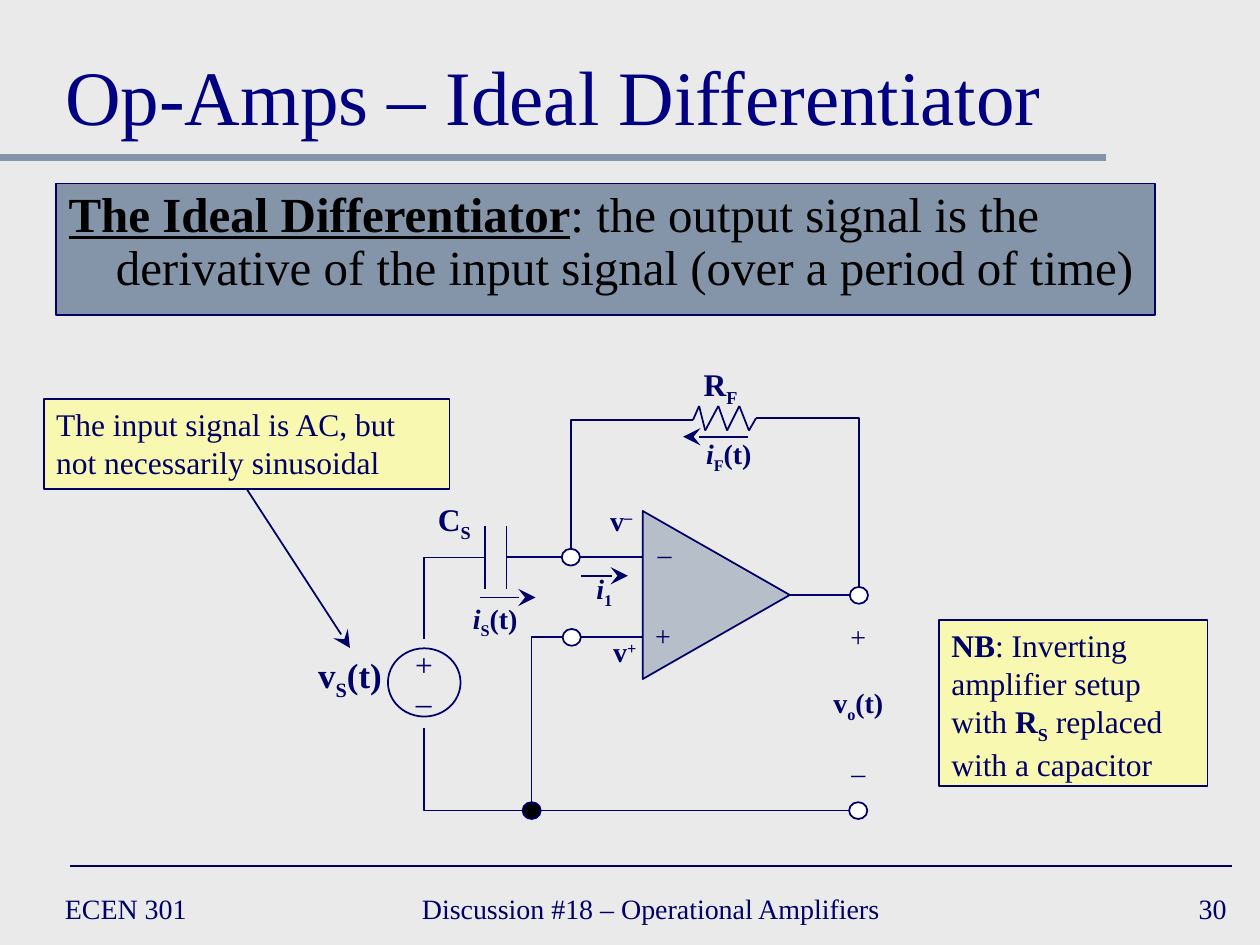
from itertools import pairwise
from lxml import etree
from pptx import Presentation
from pptx.dml.color import RGBColor
from pptx.enum import shapes as es, text as et
from pptx.oxml.ns import qn
from pptx.util import Pt

NAVY = RGBColor(0x00, 0x00, 0x66)
TITLE_BLUE = RGBColor(0x00, 0x00, 0x80)
SLATE = RGBColor(0x84, 0x95, 0xA9)
YELLOW = RGBColor(0xFF, 0xFF, 0x99)
WHITE = RGBColor(0xFF, 0xFF, 0xFF)
BLACK = RGBColor(0x00, 0x00, 0x00)
PAPER = RGBColor(0xEA, 0xEA, 0xEA)
FONT = "Times New Roman"
BASELINES = {"sub": "-25000", "sup": "30000"}

deck = Presentation()
deck.slide_width, deck.slide_height = Pt(720), Pt(540)
slide = deck.slides.add_slide(deck.slide_layouts[1])
slide.background.fill.solid()
slide.background.fill.fore_color.rgb = PAPER
shapes = slide.shapes


def write(paragraph, runs, size, color=NAVY):
    for words, style in runs:
        run = paragraph.add_run()
        run.text = words
        font = run.font
        font.name, font.size, font.color.rgb = FONT, Pt(size), color
        font.bold = "bold" in style
        font.italic = "italic" in style
        font.underline = "underline" in style
        for key, offset in BASELINES.items():
            if key in style:
                run._r.get_or_add_rPr().set("baseline", offset)


def draw_line(x1, y1, x2, y2, color=NAVY, width=1, arrow=False, bent=False):
    kind = es.MSO_CONNECTOR.ELBOW if bent else es.MSO_CONNECTOR.STRAIGHT
    line = shapes.add_connector(kind, Pt(x1), Pt(y1), Pt(x2), Pt(y2))
    line.line.color.rgb, line.line.width = color, Pt(width)
    properties = line._element.spPr
    if bent:
        properties.find(qn("a:prstGeom")).set("prst", "bentConnector2")
    if arrow:
        etree.SubElement(line.line._get_or_add_ln(), qn("a:tailEnd"), type="stealth", w="lg", len="lg")
    etree.SubElement(properties, qn("a:effectLst"))
    return line


draw_line(0, 90, 632, 90, SLATE, 4)
draw_line(40, 495, 704, 495)

title = shapes.title
title.left, title.top, title.width, title.height = Pt(30), Pt(12), Pt(660), Pt(72)
title.text_frame.auto_size = et.MSO_AUTO_SIZE.NONE
title.text_frame.vertical_anchor = et.MSO_ANCHOR.BOTTOM
heading = title.text_frame.paragraphs[0]
heading.alignment = et.PP_ALIGN.LEFT
write(heading, [("Op-Amps – Ideal Differentiator", "")], 44, TITLE_BLUE)

definition = slide.placeholders[1]
definition.left, definition.top, definition.width, definition.height = Pt(32), Pt(105), Pt(628), Pt(75)
definition.fill.solid()
definition.fill.fore_color.rgb = SLATE
definition.line.color.rgb, definition.line.width = NAVY, Pt(0.75)
definition.text_frame.auto_size = et.MSO_AUTO_SIZE.NONE
statement = definition.text_frame.paragraphs[0]
statement.line_spacing, statement.space_before = 0.9, Pt(0)
indents = statement._p.get_or_add_pPr()
indents.set("marL", str(Pt(27)))
indents.set("indent", str(Pt(-27)))
etree.SubElement(indents, qn("a:buNone"))
write(statement, [("The Ideal Differentiator", "bold underline"),
                  (": the output signal is the derivative of the input signal (over a period of time)", "")],
      28, BLACK)

amplifier = shapes.add_shape(es.MSO_SHAPE.ISOSCELES_TRIANGLE, Pt(361.3), Pt(298), Pt(96), Pt(84))
amplifier.rotation = 90
source = shapes.add_shape(es.MSO_SHAPE.OVAL, Pt(221.7), Pt(370.5), Pt(41.5), Pt(39))
notes = []
for x, y, w, h, runs in [
    (25, 228, 232, 51.5, [("The input signal is AC, but not necessarily sinusoidal", "")]),
    (536.5, 354.3, 153.5, 95, [("NB", "bold"), (": Inverting amplifier setup with ", ""), ("R", "bold"),
                               ("S", "bold sub"), (" replaced with a capacitor", "")]),
]:
    note = shapes.add_shape(es.MSO_SHAPE.RECTANGLE, Pt(x), Pt(y), Pt(w), Pt(h))
    note.text_frame.word_wrap = True
    note.text_frame.vertical_anchor = et.MSO_ANCHOR.TOP
    note.text_frame.paragraphs[0].alignment = et.PP_ALIGN.LEFT
    write(note.text_frame.paragraphs[0], runs, 18)
    notes.append(note)

for part, color, opacity in [(amplifier, SLATE, 50), (notes[0], YELLOW, 70), (notes[1], YELLOW, 70)]:
    part.fill.solid()
    part.fill.fore_color.rgb = color
    tint = part.fill._xPr.find(qn("a:solidFill"))[0]
    etree.SubElement(tint, qn("a:alpha"), val=str(opacity * 1000))
source.fill.background()
for part in [amplifier, source, *notes]:
    part.shadow.inherit = False
    part.line.color.rgb, part.line.width = NAVY, Pt(1)

for wire in [
    (367, 364.2, 331.5, 364.2), (367, 318.4, 331.5, 318.4), (486, 340.2, 451, 340.2),
    (485.5, 463.2, 309, 463.2), (321, 318.4, 289.4, 318.4),
    (277.2, 300.5, 277.2, 336.5), (289.4, 300.5, 289.4, 336.5),
]:
    draw_line(*wire)
for bend in [
    (396, 240, 326.2, 313.2), (432, 239, 490.8, 335.5), (277.2, 318.6, 242.4, 365),
    (321.5, 364.2, 303.8, 458.6), (299, 463.2, 242.4, 415.8),
]:
    draw_line(*bend, bent=True)

resistor = [(396, 240), (399.5, 232), (403, 246), (410.5, 232), (415.5, 246),
            (422.5, 232), (428, 246), (432, 239)]
for start, end in pairwise(resistor):
    draw_line(*start, *end)

for current in [(332, 329, 358.8, 329), (427.5, 249.6, 390.4, 249.6), (274.2, 341.4, 306, 341.4)]:
    draw_line(*current, arrow=True)
pointer = draw_line(141, 279.5, 200, 370.3, arrow=True)
pointer.begin_connect(notes[0], 2)

for x, y, color in [(326.7, 364.2, WHITE), (326.2, 318.4, WHITE), (490.8, 340.2, WHITE),
                    (490.4, 463.2, WHITE), (303.8, 463.2, BLACK)]:
    node = shapes.add_shape(es.MSO_SHAPE.OVAL, Pt(x - 5.2), Pt(y - 4.8), Pt(10.4), Pt(9.6))
    node.shadow.inherit = False
    node.fill.solid()
    node.fill.fore_color.rgb = color
    node.line.color.rgb, node.line.width = NAVY, Pt(1)

LEFT, CENTER, RIGHT = et.PP_ALIGN.LEFT, et.PP_ALIGN.CENTER, et.PP_ALIGN.RIGHT
for x, y, w, h, size, align, gap, lines in [
    (30, 504, 156, 30, 16, LEFT, 0, [[("ECEN 301", "")]]),
    (234, 504, 276, 30, 16, LEFT, 0, [[("Discussion #18 – Operational Amplifiers", "")]]),
    (558, 504, 150, 30, 16, RIGHT, 0, [[("30", "")]]),
    (368.5, 303, 22.5, 26.6, 16, CENTER, 0, [[("–", "")]]),
    (367, 350, 23.8, 26.6, 16, CENTER, 0, [[("+", "")]]),
    (468.5, 350.6, 44, 103.7, 16, CENTER, 18.4,
     [[("+", "")], [("v", "bold"), ("o", "bold sub"), ("(t)", "bold")], [("–", "")]]),
    (333, 323.3, 24.5, 26.6, 16, CENTER, 0, [[("i", "bold italic"), ("1", "bold sub")]]),
    (242.6, 282.2, 34, 29, 18, CENTER, 0, [[("C", "bold"), ("S", "bold sub")]]),
    (394.5, 205.2, 34.5, 29, 18, CENTER, 0, [[("R", "bold"), ("F", "bold sub")]]),
    (174, 370, 52, 31, 20, CENTER, 0, [[("v", "bold"), ("S", "bold sub"), ("(t)", "bold")]]),
    (230, 365, 24.5, 50.4, 18, CENTER, 0, [[("+", "")], [("–", "")]]),
    (342.5, 359.3, 29, 26.6, 16, CENTER, 0, [[("v", "bold"), ("+", "bold sup")]]),
    (341, 284.4, 28, 26.6, 16, CENTER, 0, [[("v", "bold"), ("–", "bold sup")]]),
    (395.5, 246.2, 42, 26.6, 16, CENTER, 0, [[("i", "bold italic"), ("F", "bold sub"), ("(t)", "bold")]]),
    (262.5, 340, 41, 26.6, 16, CENTER, 0, [[("i", "bold italic"), ("S", "bold sub"), ("(t)", "bold")]]),
]:
    frame = shapes.add_textbox(Pt(x), Pt(y), Pt(w), Pt(h)).text_frame
    frame.word_wrap = False
    if y == 504:
        frame.vertical_anchor = et.MSO_ANCHOR.MIDDLE
    for index, runs in enumerate(lines):
        paragraph = frame.add_paragraph() if index else frame.paragraphs[0]
        paragraph.alignment = align
        if index:
            paragraph.space_before = Pt(gap)
        write(paragraph, runs, size)

deck.save("out.pptx")
